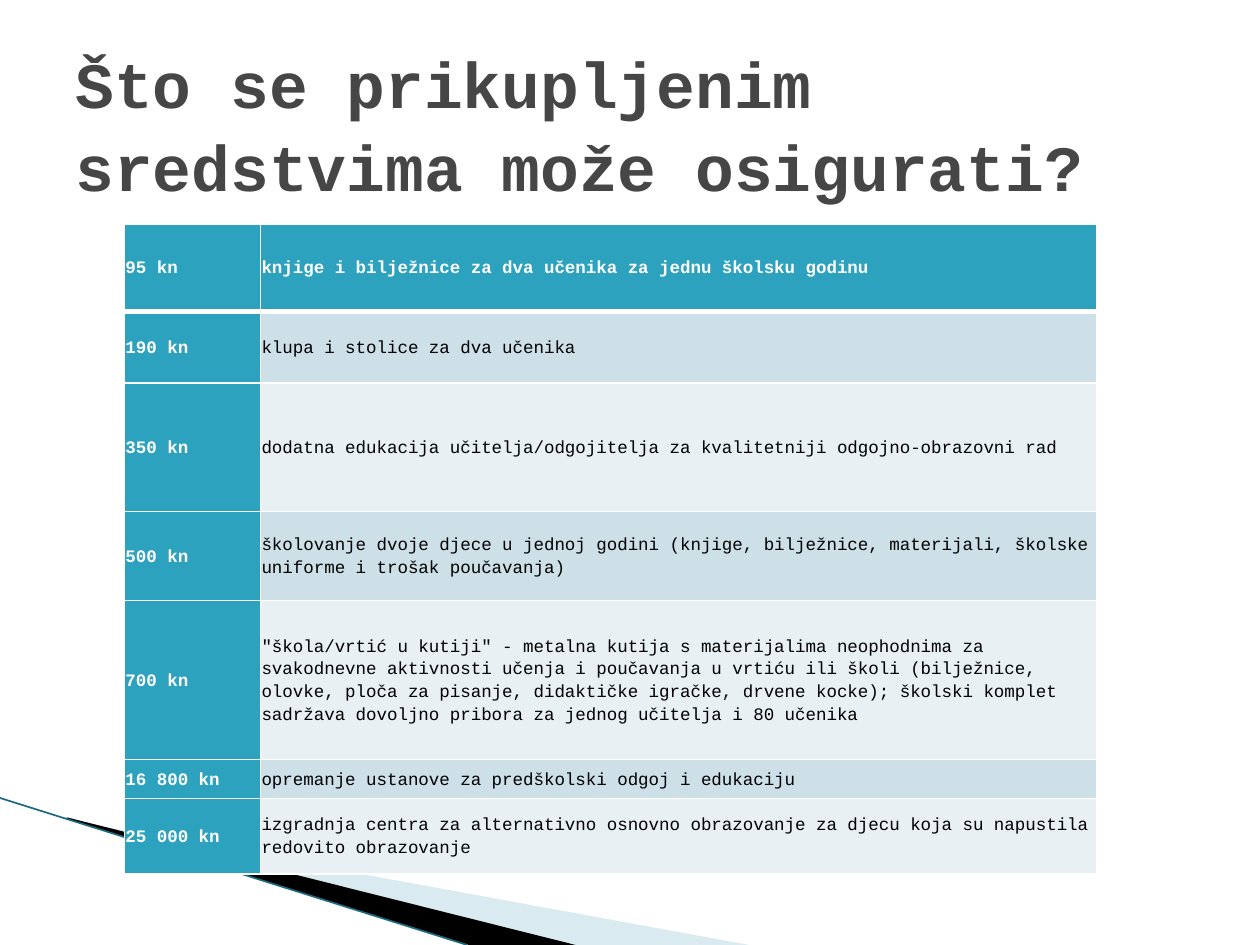
from lxml.etree import SubElement
from pptx import Presentation
from pptx.dml.color import RGBColor
from pptx.enum.text import MSO_ANCHOR
from pptx.oxml.ns import qn
from pptx.util import Pt

TITLE = "Što se prikupljenim sredstvima može osigurati?"
ROWS = [
    ("95 kn", "knjige i bilježnice za dva učenika za jednu školsku godinu", 49.7),
    ("190 kn", "klupa i stolice za dva učenika", 41),
    ("350 kn", "dodatna edukacija učitelja/odgojitelja za kvalitetniji odgojno-obrazovni rad", 73.4),
    ("500 kn", "školovanje dvoje djece u jednoj godini (knjige, bilježnice, materijali, "
               "školske uniforme i trošak poučavanja)", 51),
    ("700 kn", "\"škola/vrtić u kutiji\" - metalna kutija s materijalima neophodnima za "
               "svakodnevne aktivnosti učenja i poučavanja u vrtiću ili školi (bilježnice, "
               "olovke, ploča za pisanje, didaktičke igračke, drvene kocke); školski komplet "
               "sadržava dovoljno pribora za jednog učitelja i 80 učenika", 90.7),
    ("16 800 kn", "opremanje ustanove za predškolski odgoj i edukaciju", 22.3),
    ("25 000 kn", "izgradnja centra za alternativno osnovno obrazovanje za djecu koja su "
                  "napustila redovito obrazovanje", 43.2),
]
COLUMNS = (77.8, 478)
THEME = {
    "font": "Courier New", "title_size": 36.9, "table_size": 10,
    "title": "464646", "accent": "2DA2BF", "bands": ("E8F0F4", "CDE0E8"),
    "light": "FFFFFF", "dark": "000000", "sweep": "A0CBDC", "edge": "1B6A80",
}
SWEEPS = [
    ([(39.6, 468.7), (428.4, 540), (328.3, 540), (39.6, 468)], "sweep", 40),
    ([(38.2, 467.3), (329, 540), (267.8, 540), (38.9, 468)], "dark", 100),
]
EDGE = (0, 456, 267, 540)


def color(name):
    return RGBColor.from_string(THEME.get(name, name))


def apply(target, values):
    for name, value in values.items():
        setattr(target, name, value)


def write(frame, text, size, ink, bold, spacing):
    para = frame.paragraphs[0]
    para.line_spacing = spacing
    span = para.add_run()
    span.text = text
    apply(span.font, {"name": THEME["font"], "size": Pt(size), "bold": bold})
    span.font.color.rgb = color(ink)


def add_sweep(page, points, fill, opacity):
    builder = page.shapes.build_freeform(*points[0], scale=Pt(1))
    builder.add_line_segments(points[1:], close=True)
    sweep = builder.convert_to_shape()
    sweep.shadow.inherit = False
    sweep.fill.solid()
    sweep.fill.fore_color.rgb = color(fill)
    sweep.line.fill.background()
    if opacity < 100:
        tint = sweep.fill._xPr.find(qn("a:solidFill"))[0]
        SubElement(tint, qn("a:alpha"), val=str(opacity * 1000))


def add_edge(page):
    edge = page.shapes.add_connector(1, *map(Pt, EDGE))
    edge.line.color.rgb = color("edge")
    edge.line.width = Pt(0.95)
    SubElement(edge._element.spPr, qn("a:effectLst"))


def add_borders(cell, widths):
    properties = cell._tc.get_or_add_tcPr()
    for index, (side, width) in enumerate(widths.items()):
        border = SubElement(properties, qn(f"a:ln{side}"), w=str(Pt(width)))
        fill = SubElement(border, qn("a:solidFill"))
        SubElement(fill, qn("a:srgbClr"), val=THEME["light"])
        properties.insert(index, border)


def add_prices(page):
    height = sum(row[2] for row in ROWS)
    table = page.shapes.add_table(len(ROWS), len(COLUMNS), Pt(71), Pt(128.2),
                                  Pt(sum(COLUMNS)), Pt(height)).table
    for column, width in zip(table.columns, COLUMNS):
        column.width = Pt(width)
    margins = dict.fromkeys(("margin_left", "margin_top", "margin_right", "margin_bottom"), Pt(0.7))
    for r, (price, purpose, height) in enumerate(ROWS):
        table.rows[r].height = Pt(height)
        for c, text in enumerate((price, purpose)):
            cell = table.cell(r, c)
            strong = r == 0 or c == 0
            apply(cell, {**margins, "vertical_anchor": MSO_ANCHOR.MIDDLE})
            cell.fill.solid()
            cell.fill.fore_color.rgb = color("accent" if strong else THEME["bands"][r % 2])
            add_borders(cell, {"L": 1, "R": 1, "T": 3 if r == 1 else 1, "B": 3 if r == 0 else 1})
            write(cell.text_frame, text, THEME["table_size"],
                  "light" if strong else "dark", strong, 1.15)


def add_title(page):
    box = page.shapes.add_textbox(Pt(36), Pt(21.6), Pt(648), Pt(90))
    apply(box.text_frame, {"word_wrap": True, "vertical_anchor": MSO_ANCHOR.MIDDLE,
                           "margin_top": Pt(9)})
    write(box.text_frame, TITLE, THEME["title_size"], "title", True, 1.07)


def main():
    deck = Presentation()
    apply(deck, {"slide_width": Pt(720), "slide_height": Pt(540)})
    page = deck.slides.add_slide(deck.slide_layouts[6])
    for points, fill, opacity in SWEEPS:
        add_sweep(page, points, fill, opacity)
    add_edge(page)
    add_prices(page)
    add_title(page)
    deck.save("out.pptx")


if __name__ == "__main__":
    main()
